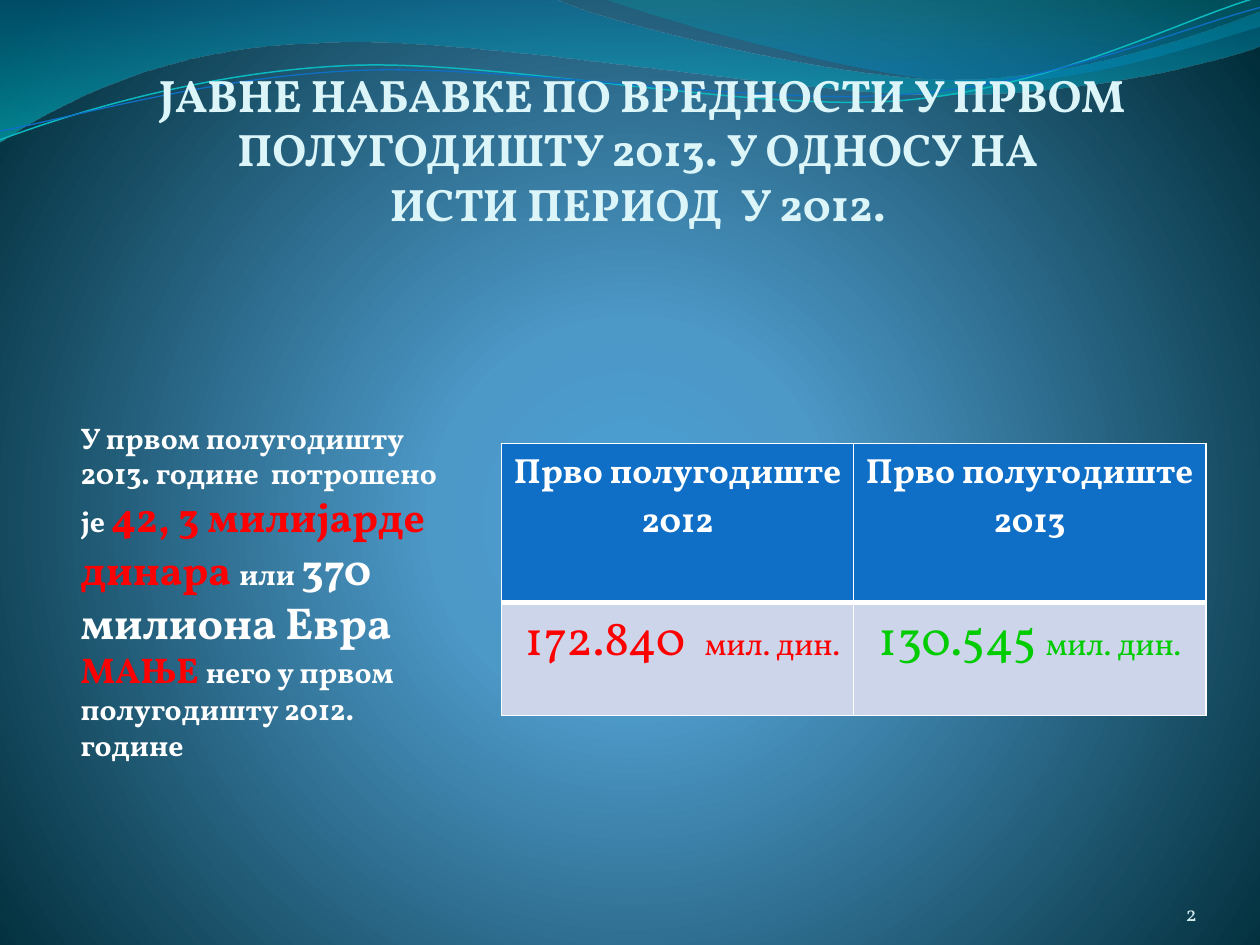
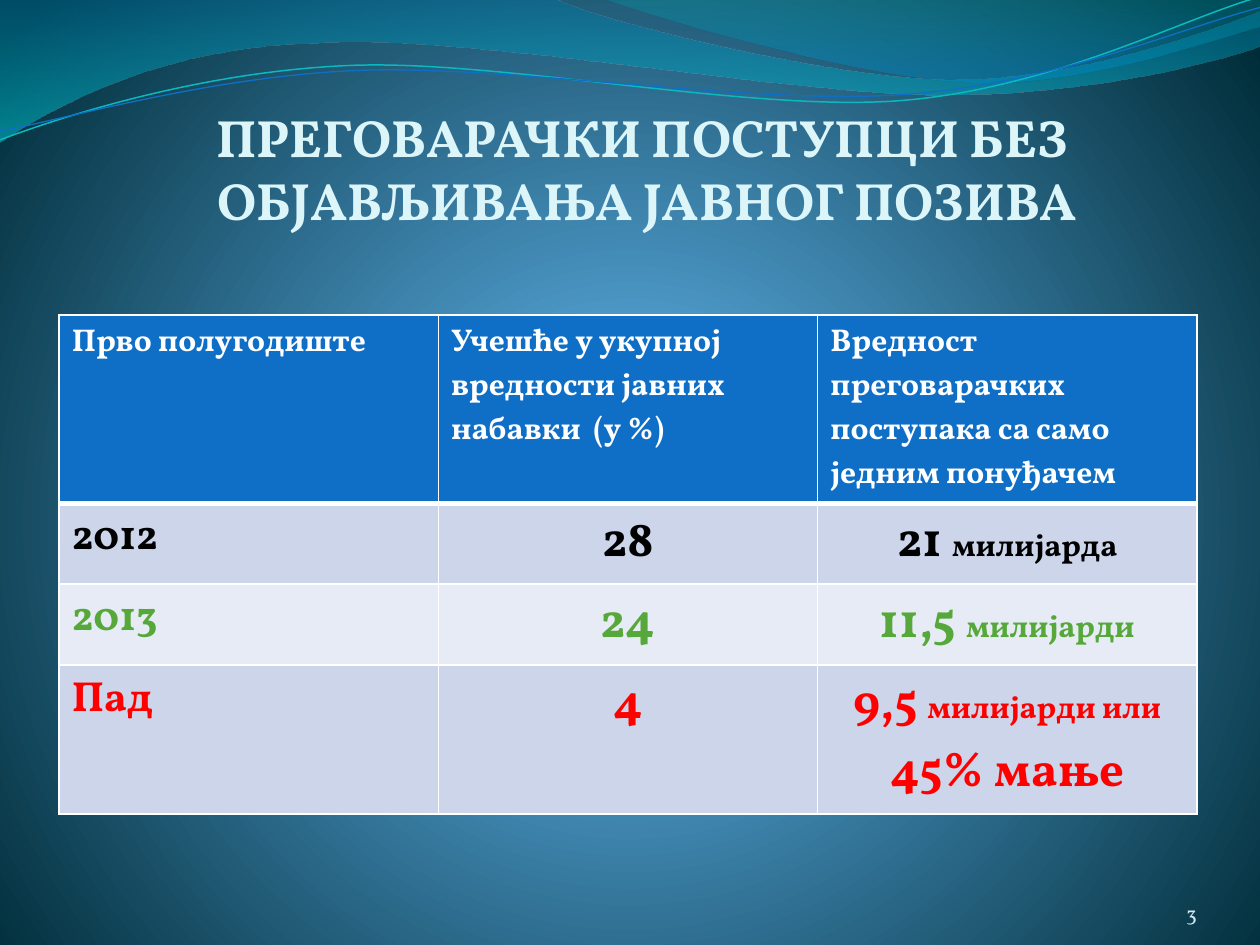
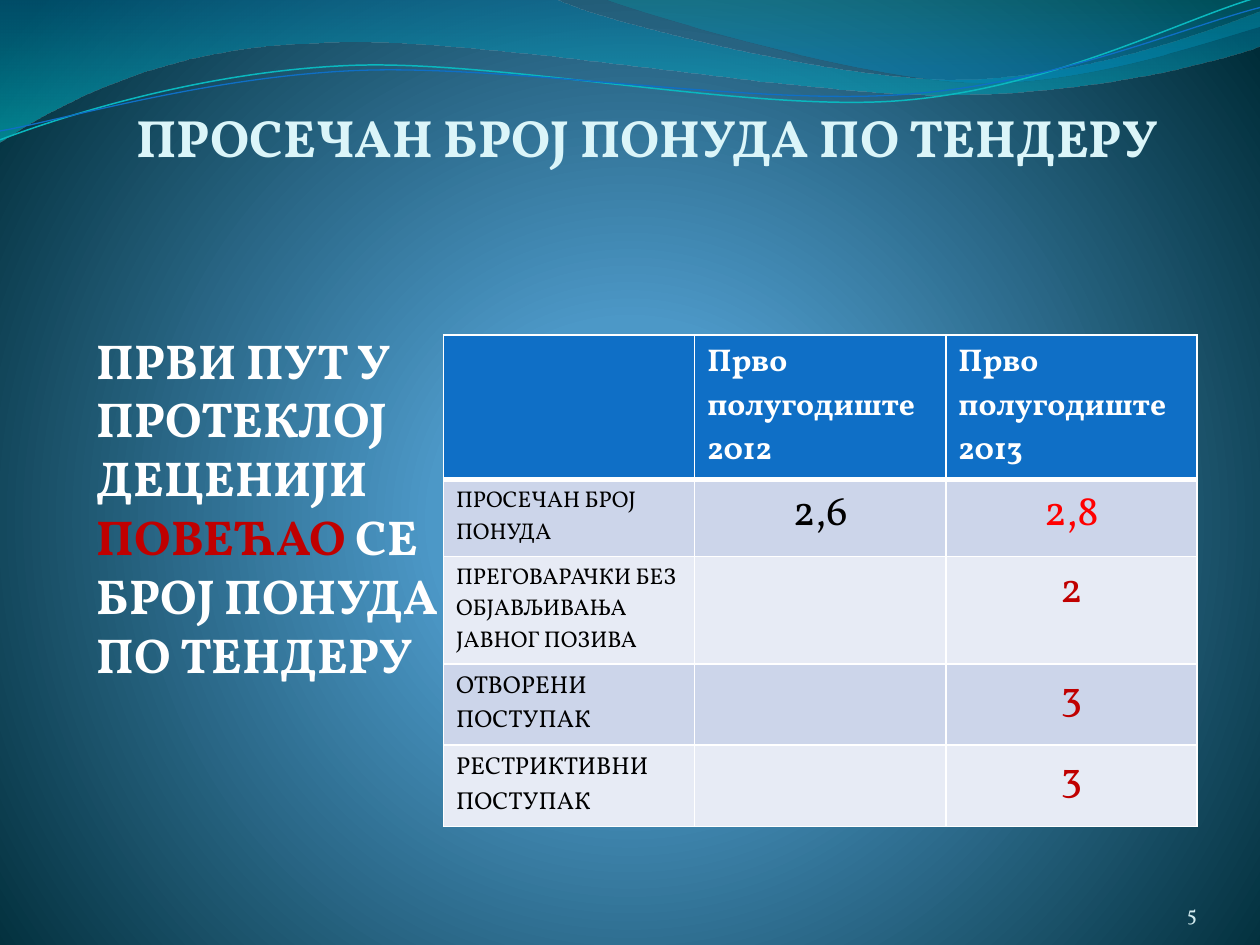
from copy import deepcopy
from math import cos, radians, sin
from pptx import Presentation
from pptx.dml.color import RGBColor
from pptx.enum.text import MSO_ANCHOR, MSO_AUTO_SIZE, PP_ALIGN
from pptx.oxml import parse_xml
from pptx.oxml.ns import nsdecls, qn
from pptx.util import Inches, Pt

FONT = "Vollkorn"
WHITE = RGBColor(0xFF, 0xFF, 0xFF)
BLACK = RGBColor(0x00, 0x00, 0x00)
PALE = RGBColor(0xDB, 0xF5, 0xF9)
MIST = RGBColor(0xD1, 0xEA, 0xEE)
BLUE = RGBColor(0x0F, 0x6F, 0xC6)
TEAL = RGBColor(0x0A, 0xB8, 0xBF)
RED = RGBColor(0xFF, 0x00, 0x00)
WINE = RGBColor(0xC0, 0x00, 0x00)
LIME = RGBColor(0x00, 0xCC, 0x00)
GREEN = RGBColor(0x55, 0xA8, 0x39)
BANDS = [RGBColor(0xCC, 0xD5, 0xEA), RGBColor(0xE7, 0xEB, 0xF5)]
LEFT, MID, RIGHT = PP_ALIGN.LEFT, PP_ALIGN.CENTER, PP_ALIGN.RIGHT

GLOW = [(0, "4AA0D6", 100), (25, "4C98C7", 100), (100, "002C38", 100)]
GLOW_PATH = ('<a:path path="circle"><a:fillToRect l="10000" t="110000" '
             'r="10000" b="100000"/></a:path>')
DOWN = '<a:lin ang="5400000" scaled="1"/>'
TILT = 357.3

FILLS = [
    ([[(0, 0)],
      [(4.4, -0.01)],
      [(4.76, 0.17), (6.64, 0.63), (7.58, 0.63)],
      [(8.53, 0.63), (9.58, 0.26), (10, 0.09)],
      [(10.01, 0.36)],
      [(9.83, 0.44), (8.7, 0.76), (7.46, 0.75)],
      [(6.22, 0.75), (3.82, 0.28), (2.57, 0.34)],
      [(1.29, 0.36), (0.46, 0.83), (-0.01, 1.13)],
      [(0, 0)]],
     [(0, "0074A1", 45), (100, "00C6CF", 55)]),
    ([[(4.79, -0.01)],
      [(5.09, 0.11), (6.82, 0.62), (7.69, 0.65)],
      [(8.56, 0.69), (9.61, 0.32), (10, 0.21)],
      [(10, 0)],
      [(4.79, -0.01)]],
     [(0, "00A1A9", 30), (80, "008BBF", 45)]),
]
LINES = [
    ([[(0, 1.11)],
      [(0.48, 0.93), (1.58, 0.57), (2.77, 0.52)],
      [(3.95, 0.47), (5.93, 0.89), (7.13, 0.8)],
      [(8.33, 0.71), (9.38, 0.15), (9.98, -0.02)]],
     (4.99, 0.58), TEAL, 0.85),
    ([[(0, 1.04)],
      [(0.47, 0.96), (1.64, 0.61), (2.83, 0.56)],
      [(4.03, 0.51), (5.97, 0.84), (7.17, 0.75)],
      [(8.36, 0.67), (9.41, 0.21), (10, 0.06)]],
     (5, 0.59), BLUE, 0.75),
]


def level(parts, hub):
    turn = radians(360 - TILT)
    def spin(x, y):
        dx, dy = x - hub[0], y - hub[1]
        return (hub[0] + dx * cos(turn) - dy * sin(turn),
                hub[1] + dx * sin(turn) + dy * cos(turn))
    return [[spin(*dot) for dot in part] for part in parts]


def blend(fill, node, stops, tail):
    fill.gradient()
    old = node.find(".//" + qn("a:gradFill"))
    marks = "".join(
        f'<a:gs pos="{at * 1000}"><a:srgbClr val="{tone}">'
        f'<a:alpha val="{alpha * 1000}"/></a:srgbClr></a:gs>'
        for at, tone, alpha in stops)
    old.getparent().replace(old, parse_xml(
        f'<a:gradFill {nsdecls("a")} rotWithShape="1">'
        f'<a:gsLst>{marks}</a:gsLst>{tail}</a:gradFill>'))


def say(frame, *paras, size=18, color=WHITE, bold=False, align=LEFT):
    for i, runs in enumerate(paras):
        para = frame.add_paragraph() if i else frame.paragraphs[0]
        para.alignment = align
        for text, *style in [(runs,)] if isinstance(runs, str) else runs:
            for j, line in enumerate(text.split("\n")):
                if j:
                    para.add_line_break()
                    para._p[-1].append(deepcopy(run._r.rPr))
                if not line:
                    continue
                run = para.add_run()
                run.text = line
                font = run.font
                font.name, font.bold = FONT, bold
                font.size = Pt(style[0] if style else size)
                font.color.rgb = style[1] if len(style) > 1 else color


def cell(*paras, **form):
    return paras, form


class Deck:
    def __init__(self):
        self.prs = Presentation()
        self.prs.slide_width, self.prs.slide_height = Inches(10), Inches(7.5)
        self.slide = None
        master = self.prs.slide_master
        blend(master.background.fill, master.element, GLOW, GLOW_PATH)

    def page(self, number):
        self.slide = self.prs.slides.add_slide(self.prs.slide_layouts[5])
        self.text((8.67, 6.95, 0.83, 0.4), str(number), size=12, color=MIST,
                  align=RIGHT, pad=(0, 0, 0, 0), anchor=MSO_ANCHOR.BOTTOM)

    def curve(self, parts):
        ends = [(Inches(part[-1][0]), Inches(part[-1][1])) for part in parts]
        pen = self.slide.shapes.build_freeform(*ends[0])
        pen.add_line_segments(ends[1:], close=ends[0] == ends[-1])
        wave = pen.convert_to_shape()
        wave.shadow.inherit = False
        legs = list(wave.element.iter(qn("a:lnTo")))
        for leg, part in zip(legs, parts[1:]):
            if len(part) == 3:
                dots = "".join(f'<a:pt x="{Inches(x) - wave.left}" y="{Inches(y) - wave.top}"/>'
                               for x, y in part)
                leg.getparent().replace(leg, parse_xml(
                    f'<a:cubicBezTo {nsdecls("a")}>{dots}</a:cubicBezTo>'))
        return wave

    def waves(self):
        shapes = []
        for parts, stops in FILLS:
            wave = self.curve(parts)
            blend(wave.fill, wave.element, stops, DOWN)
            wave.line.fill.background()
            shapes.append(wave)
        for parts, hub, color, width in LINES:
            wave = self.curve(level(parts, hub))
            wave.rotation = TILT
            wave.fill.background()
            wave.line.color.rgb, wave.line.width = color, Pt(width)
            shapes.append(wave)
        tree = self.prs.slide_master.shapes.element
        for n, wave in enumerate(shapes):
            wave.element.nvSpPr.cNvPr.set("id", str(101 + n))
            tree.insert(2 + n, wave.element)

    def frame(self, shape, pad, anchor):
        frame = shape.text_frame
        frame.word_wrap, frame.auto_size = True, MSO_AUTO_SIZE.NONE
        frame.vertical_anchor = anchor
        (frame.margin_left, frame.margin_top, frame.margin_right,
         frame.margin_bottom) = map(Inches, pad)
        return frame

    def title(self, text, size=30, width=8.78):
        head = self.slide.shapes.title
        head.left, head.top, head.width, head.height = map(Inches, (0.75, 0.56, width, 1.27))
        say(self.frame(head, (0, 0.05, 0, 0), MSO_ANCHOR.BOTTOM), text,
            size=size, color=PALE, bold=True, align=MID)

    def text(self, box, *paras, pad=(0.02, 0.05, 0.02, 0.05), anchor=MSO_ANCHOR.TOP, **form):
        shape = self.slide.shapes.add_textbox(*map(Inches, box))
        say(self.frame(shape, pad, anchor), *paras, **form)

    def edge(self, box, foot):
        props = box._tc.get_or_add_tcPr()
        for side in "LRTB":
            width = Pt(foot if side == "B" else 1)
            props.append(parse_xml(
                f'<a:ln{side} {nsdecls("a")} w="{width}"><a:solidFill>'
                f'<a:srgbClr val="{WHITE}"/></a:solidFill></a:ln{side}>'))

    def table(self, left, top, width, highs, rows, pad=0.1):
        count = len(rows[0])
        grid = self.slide.shapes.add_table(
            len(rows), count, Inches(left), Inches(top),
            Inches(width), Inches(sum(highs))).table
        for col in grid.columns:
            col.width = Inches(width / count)
        for r, (high, row) in enumerate(zip(highs, rows)):
            grid.rows[r].height = Inches(high)
            for c, (paras, form) in enumerate(row):
                box = grid.cell(r, c)
                self.edge(box, 1 if r else 3)
                box.fill.solid()
                box.fill.fore_color.rgb = BANDS[(r - 1) % 2] if r else BLUE
                box.margin_left = box.margin_right = Inches(pad)
                say(box.text_frame, *paras, **form)


def value(deck):
    deck.page(2)
    deck.waves()
    deck.title("ЈАВНЕ НАБАВКЕ ПО ВРЕДНОСТИ У ПРВОМ ПОЛУГОДИШТУ 2013. У ОДНОСУ НА \n"
               "ИСТИ ПЕРИОД  У 2012. ", size=26, width=8.7)
    deck.text((0.62, 3.28, 3, 2.5), [
        ("У првом полугодишту 2013. године  потрошено је ",),
        ("42, 3 милијарде динара ", 23.8, RED),
        ("или ",),
        ("370 милиона Евра  ", 25.5),
        ("МАЊЕ ", 20.4, RED),
        ("него у првом полугодишту 2012. године",)], size=17, bold=True)
    heads = [cell(f"Прво полугодиште {year}", size=20, bold=True, align=MID)
             for year in (2012, 2013)]
    sums = [cell([*lead, (total, 28), ("мил. дин.", 18)], color=color, align=MID)
            for lead, total, color in (([(" ", 28, BLACK)], "172.840  ", RED),
                                       ([], "130.545 ", LIME))]
    deck.table(3.98, 3.52, 5.59, [1.26, 0.9], [heads, sums], pad=0.06)


def talks(deck):
    deck.page(3)
    deck.title("ПРЕГОВАРАЧКИ ПОСТУПЦИ БЕЗ \nОБЈАВЉИВАЊА ЈАВНОГ ПОЗИВА")
    rows = [[cell(text, bold=True) for text in (
        "Прво полугодиште",
        "Учешће у укупној вредности јавних набавки  (у %)",
        "Вредност преговарачких поступака са само једним понуђачем")]]
    for name, share, color, *worth in (
            ("2012", "28", BLACK, [("21 ",), ("милијарда", 18)]),
            ("2013", "24", GREEN, [("11,5 ",), ("милијарди", 18)]),
            ([("Пад",), (" ", 18)], "4", RED,
             [("9,5 ",), ("милијарди или", 18)], "45% мање")):
        form = dict(color=color, bold=True)
        rows.append([cell(name, size=24, **form),
                     cell(share, size=28, align=MID, **form),
                     cell(*worth, size=28, align=MID, **form)])
    deck.table(0.47, 2.5, 9.03, [1.49, 0.64, 0.64, 1.18], rows)


def offers(deck):
    deck.page(5)
    deck.title("ПРОСЕЧАН БРОЈ ПОНУДА ПО ТЕНДЕРУ\n")
    deck.text((0.75, 2.03, 2.77, 4.06), [
        ("ПРВИ ПУТ У ПРОТЕКЛОЈ ДЕЦЕНИЈИ ",),
        ("ПОВЕЋАО", 28, WINE),
        (" СЕ БРОЈ ПОНУДА ПО ТЕНДЕРУ",)],
        size=28, bold=True, pad=(0.02, 0.59, 0.02, 0.05))
    rows = [[cell()] + [cell("Прво полугодиште", year, bold=True)
                        for year in ("2012", "2013")]]
    for name, size, old, new, color in (
            ("ПРОСЕЧАН БРОЈ ПОНУДА", 13, "2,6", "2,8", RED),
            ("ПРЕГОВАРАЧКИ БЕЗ ОБЈАВЉИВАЊА ЈАВНОГ ПОЗИВА", 13, "", "2", WINE),
            ("ОТВОРЕНИ ПОСТУПАК", 14, "", "3", WINE),
            ("РЕСТРИКТИВНИ ПОСТУПАК", 14, "", "3", WINE)):
        rows.append([cell(name, size=size, color=BLACK),
                     cell(old, size=24, color=BLACK, align=MID),
                     cell(new, size=24, color=color, align=MID)])
    deck.table(3.52, 2.66, 5.98, [1.13, 0.61, 0.85, 0.64, 0.64], rows)


def main():
    deck = Deck()
    for build in (value, talks, offers):
        build(deck)
    deck.prs.save("out.pptx")


if __name__ == "__main__":
    main()
